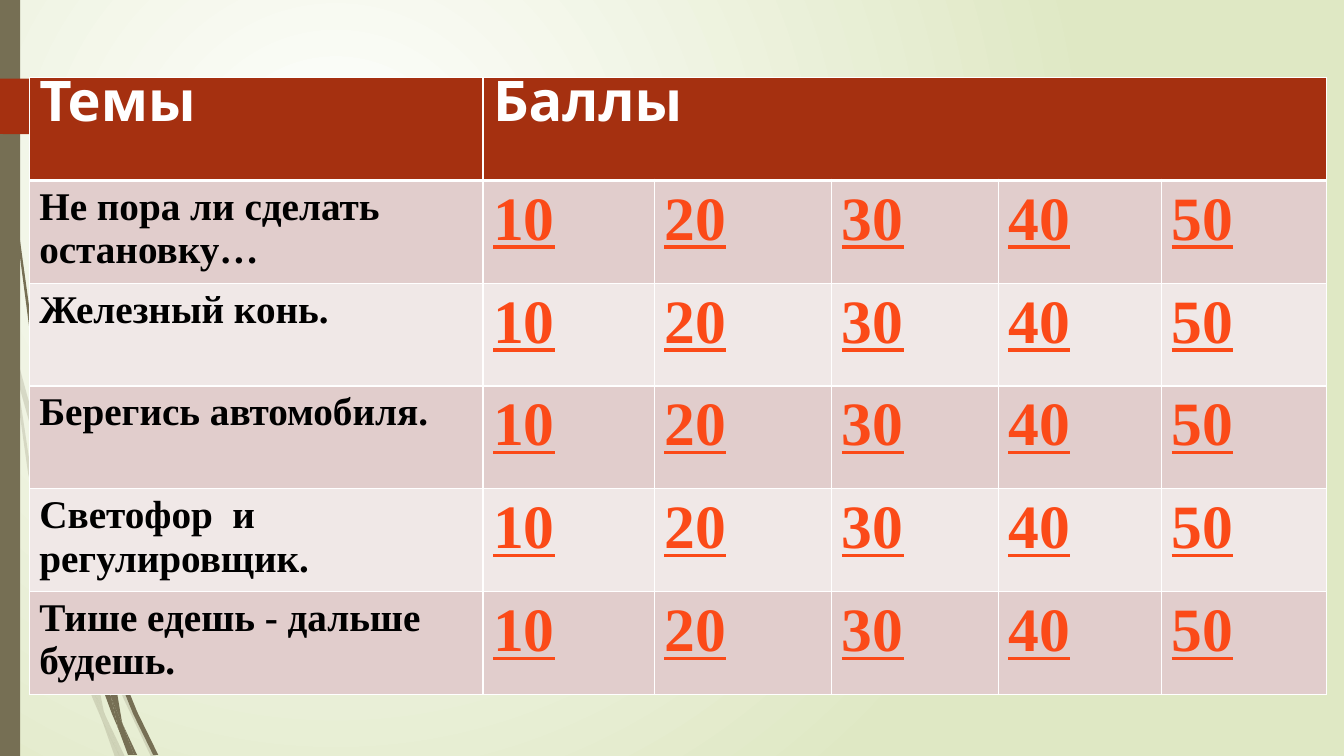
from lxml.etree import SubElement
from pptx import Presentation
from pptx.dml.color import RGBColor
from pptx.oxml import parse_xml
from pptx.oxml.ns import qn, nsdecls
from pptx.util import Inches, Pt

WHITE, RED, ORANGE, OLIVE = "FFFFFF", "A53010", "FB4A18", "766F54"
BANDS = ["E1CDCC", "F0E8E7"]
TOPICS = ["Не пора ли сделать остановку…", "Железный конь.", "Берегись автомобиля.",
          "Светофор  и регулировщик.", "Тише едешь - дальше будешь."]
POINTS = ["10", "20", "30", "40", "50"]
COLUMNS = [4.5, 1.7, 1.76, 1.65, 1.62, 1.64]
ROW_HEIGHT = 1.02

PALE_BLADES = [
    [(58, 522), (84, 599), (85, 586), (62, 520), (14, 345), (17, 376)],
    [(92, 607), (88, 596), (88, 610), (123, 694), (150, 751), (155, 751), (127, 692)],
    [(119, 751), (124, 751), (105, 711)],
    [(93, 683), (70, 619), (31, 469), (17, 376), (11, 350), (28, 470), (65, 621),
     (92, 693), (101, 714), (99, 707)],
    [(84, 599), (87, 646), (93, 683), (96, 692), (105, 711), (103, 706), (91, 646),
     (88, 610), (88, 608)],
    [(101, 714), (114, 751), (119, 751)],
    [(96, 692), (93, 683), (99, 707), (101, 714), (119, 751), (105, 711)],
]
DARK_BLADES = [
    [(7, 110), (17, 233), (33, 355), (56, 477), (57, 481), (55, 457), (55, 453),
     (36, 355), (19, 232), (8, 109), (5, 48), (4, 0), (3, 0), (4, 48)],
    [(113, 649), (110, 641), (111, 656), (132, 708), (152, 749), (157, 749), (136, 706)],
    [(110, 691), (98, 657), (72, 556), (64, 505), (57, 477), (68, 557), (93, 659),
     (111, 708), (117, 722), (116, 717)],
    [(133, 749), (136, 749), (122, 719)],
    [(117, 722), (127, 749), (131, 749)],
    [(106, 645), (110, 691), (116, 706), (122, 719), (121, 716), (111, 656), (109, 651)],
    [(116, 706), (110, 691), (116, 717), (117, 722), (130, 749), (133, 749), (122, 719)],
]
TAG = [(173, 108), (148, 133), (146, 134), (136, 134), (0, 133), (0, 78), (136, 78),
       (146, 78), (148, 79), (173, 104)]


def rgb(color):
    """Turn a hex string into a colour."""
    return RGBColor.from_string(color)


def add_background(s):
    """Fill the slide with a circular glow from white to pale green."""
    fill = s.background.fill
    fill.gradient()
    for stop, color in zip(fill.gradient_stops, [WHITE, "DFE8C4"]):
        stop.color.rgb = rgb(color)
    grad = s.element.xpath(".//p:bg//a:gradFill")[0]
    for lin in grad.findall(qn("a:lin")):
        grad.remove(lin)
    stops = grad.find(qn("a:gsLst"))
    for gs, pos in zip(stops, ["0", "100000"]):
        gs.set("pos", pos)
    stops.addnext(parse_xml(
        f'<a:path {nsdecls("a")} path="circle">'
        '<a:fillToRect l="50000" t="50000" r="100000" b="100000"/></a:path>'))


def paint(sp, color, alpha=100):
    """Give a shape a plain fill without line or shadow."""
    sp.shadow.inherit = False
    sp.line.fill.background()
    sp.fill.solid()
    sp.fill.fore_color.rgb = rgb(color)
    if alpha < 100:
        clr = sp.element.spPr.find(qn("a:solidFill"))[0]
        SubElement(clr, qn("a:alpha")).set("val", str(alpha * 1000))


def add_outline(s, points, color, alpha=100):
    """Draw a closed outline given in hundredths of an inch."""
    builder = s.shapes.build_freeform(*points[0], scale=Inches(0.01))
    builder.add_line_segments(points[1:], close=True)
    paint(builder.convert_to_shape(), color, alpha)


def add_decor(s, x, y, w, h):
    """Draw the grass blades, the side bar and the red tag."""
    for blade in PALE_BLADES:
        add_outline(s, blade, OLIVE, 20)
    for blade in DARK_BLADES:
        add_outline(s, blade, OLIVE)
    bar = s.shapes.add_shape(1, Inches(x), Inches(y), Inches(w), Inches(h))
    paint(bar, OLIVE)
    add_outline(s, TAG, RED)


def fill_cell(cell, text, size, color, fill, font="Times New Roman", underline=False, bottom=1):
    """Write one cell with its fill and white borders."""
    cell.fill.solid()
    cell.fill.fore_color.rgb = rgb(fill)
    r = cell.text_frame.paragraphs[0].add_run()
    r.text = text
    r.font.name, r.font.size = font, Pt(size)
    r.font.bold, r.font.underline = True, underline
    r.font.color.rgb = rgb(color)
    tcPr = cell._tc.get_or_add_tcPr()
    for i, (side, width) in enumerate([("L", 1), ("R", 1), ("T", 1), ("B", bottom)]):
        tcPr.insert(i, parse_xml(
            f'<a:ln{side} {nsdecls("a")} w="{Pt(width)}"><a:solidFill>'
            f'<a:srgbClr val="{WHITE}"/></a:solidFill></a:ln{side}>'))


def add_score_table(s, x, y):
    """Place the table of topics and points."""
    rows = len(TOPICS) + 1
    table = s.shapes.add_table(rows, len(COLUMNS), Inches(x), Inches(y), Inches(sum(COLUMNS)),
                               Inches(rows * ROW_HEIGHT)).table
    for column, width in zip(table.columns, COLUMNS):
        column.width = Inches(width)
    for row in table.rows:
        row.height = Inches(ROW_HEIGHT)
    table.cell(0, 1).merge(table.cell(0, len(COLUMNS) - 1))
    for col, text in enumerate(["Темы", "Баллы"]):
        fill_cell(table.cell(0, col), text, 40, WHITE, RED, "League Spartan", bottom=3)
    for row, topic in enumerate(TOPICS, 1):
        band = BANDS[(row - 1) % 2]
        fill_cell(table.cell(row, 0), topic, 28, "000000", band)
        for col, points in enumerate(POINTS, 1):
            fill_cell(table.cell(row, col), points, 44, ORANGE, band, underline=True)


def main():
    """Build the slide and save it."""
    prs = Presentation()
    prs.slide_width, prs.slide_height = Inches(13.33), Inches(7.5)
    s = prs.slides.add_slide(prs.slide_layouts[6])
    add_background(s)
    add_decor(s, 0, 0, 0.2, 7.5)
    add_score_table(s, 0.29, 0.77)
    prs.save("out.pptx")


if __name__ == "__main__":
    main()
